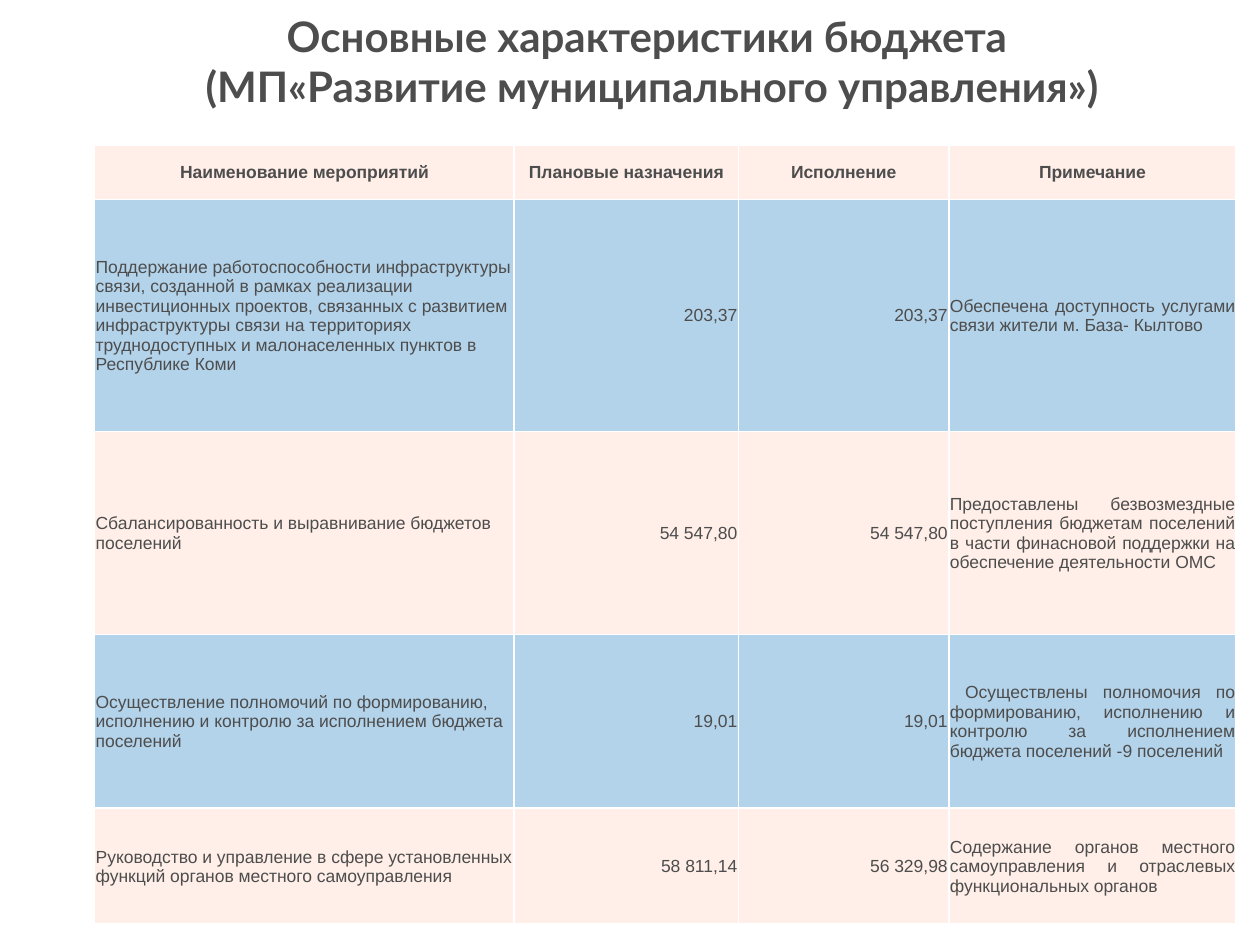
from pptx import Presentation
from pptx.dml.color import RGBColor
from pptx.enum.text import MSO_ANCHOR, PP_ALIGN
from pptx.oxml import parse_xml
from pptx.oxml.ns import nsdecls
from pptx.util import Pt

TEXT = RGBColor(0x4D, 0x4D, 0x4D)
PEACH = RGBColor(0xFF, 0xEF, 0xE8)
BLUE = RGBColor(0xB3, 0xD3, 0xEA)
BORDER = RGBColor(0xFF, 0xFF, 0xFF)

TITLE = "Основные характеристики бюджета \v(МП«Развитие муниципального управления»)"
ROWS = [
    ("Наименование мероприятий", "Плановые назначения", "Исполнение", "Примечание"),
    ("Поддержание работоспособности инфраструктуры связи, созданной в рамках "
     "реализации инвестиционных проектов, связанных с развитием инфраструктуры "
     "связи на территориях труднодоступных и малонаселенных пунктов в Республике Коми",
     "203,37", "203,37",
     "Обеспечена доступность услугами связи жители м. База- Кылтово"),
    ("Сбалансированность и выравнивание бюджетов поселений",
     "54 547,80", "54 547,80",
     "Предоставлены безвозмездные поступления бюджетам поселений в части "
     "финасновой поддержки на обеспечение деятельности ОМС"),
    ("Осуществление полномочий по формированию, исполнению и контролю "
     "за исполнением бюджета поселений",
     "19,01", "19,01",
     " Осуществлены полномочия по формированию, исполнению и контролю "
     "за исполнением бюджета поселений -9 поселений"),
    ("Руководство и управление в сфере установленных функций органов "
     "местного самоуправления",
     "58 811,14", "56 329,98",
     "Содержание органов местного самоуправления и отраслевых "
     "функциональных органов"),
]
COLUMN_WIDTHS = [239.8, 128.2, 120.2, 164.2]
ROW_HEIGHTS = [31, 132.5, 116, 99.4, 66.2]
COLUMN_ALIGNMENTS = [PP_ALIGN.LEFT, PP_ALIGN.RIGHT, PP_ALIGN.RIGHT, PP_ALIGN.JUSTIFY]


def format_paragraph(paragraph, font_name, size, bold, alignment):
    paragraph.alignment = alignment
    font = paragraph.font
    font.name, font.size, font.bold = font_name, Pt(size), bold
    font.color.rgb = TEXT


def add_borders(cell):
    properties = cell._tc.get_or_add_tcPr()
    for side in "LRTB":
        properties.append(parse_xml(
            f'<a:ln{side} {nsdecls("a")} w="{Pt(1)}"><a:solidFill>'
            f'<a:srgbClr val="{BORDER}"/></a:solidFill></a:ln{side}>'))


def add_title(slide):
    title = slide.shapes.title
    title.left, title.top, title.width, title.height = Pt(93.6), Pt(15), Pt(558), Pt(39.6)
    frame = title.text_frame
    frame.word_wrap = True
    frame.vertical_anchor = MSO_ANCHOR.MIDDLE
    frame.margin_left = frame.margin_right = frame.margin_top = frame.margin_bottom = 0
    frame.text = TITLE
    format_paragraph(frame.paragraphs[0], "Lato", 24, True, PP_ALIGN.CENTER)


def add_budget_table(slide):
    table = slide.shapes.add_table(
        len(ROWS), len(COLUMN_WIDTHS), Pt(54), Pt(83),
        Pt(sum(COLUMN_WIDTHS)), Pt(sum(ROW_HEIGHTS))).table
    table.horz_banding = False
    for column, width in zip(table.columns, COLUMN_WIDTHS):
        column.width = Pt(width)
    for row_index, (row, height, texts) in enumerate(zip(table.rows, ROW_HEIGHTS, ROWS)):
        row.height = Pt(height)
        is_header = row_index == 0
        for cell, text, alignment in zip(row.cells, texts, COLUMN_ALIGNMENTS):
            cell.text = text
            cell.vertical_anchor = MSO_ANCHOR.MIDDLE
            cell.margin_left = cell.margin_right = cell.margin_top = Pt(0.7)
            cell.margin_bottom = 0
            add_borders(cell)
            cell.fill.solid()
            cell.fill.fore_color.rgb = BLUE if row_index % 2 else PEACH
            format_paragraph(cell.text_frame.paragraphs[0], "Arial", 10, is_header,
                             PP_ALIGN.CENTER if is_header else alignment)


def main():
    presentation = Presentation()
    presentation.slide_width, presentation.slide_height = Pt(720), Pt(540)
    slide = presentation.slides.add_slide(presentation.slide_layouts[5])
    add_title(slide)
    add_budget_table(slide)
    presentation.save("out.pptx")


if __name__ == "__main__":
    main()
